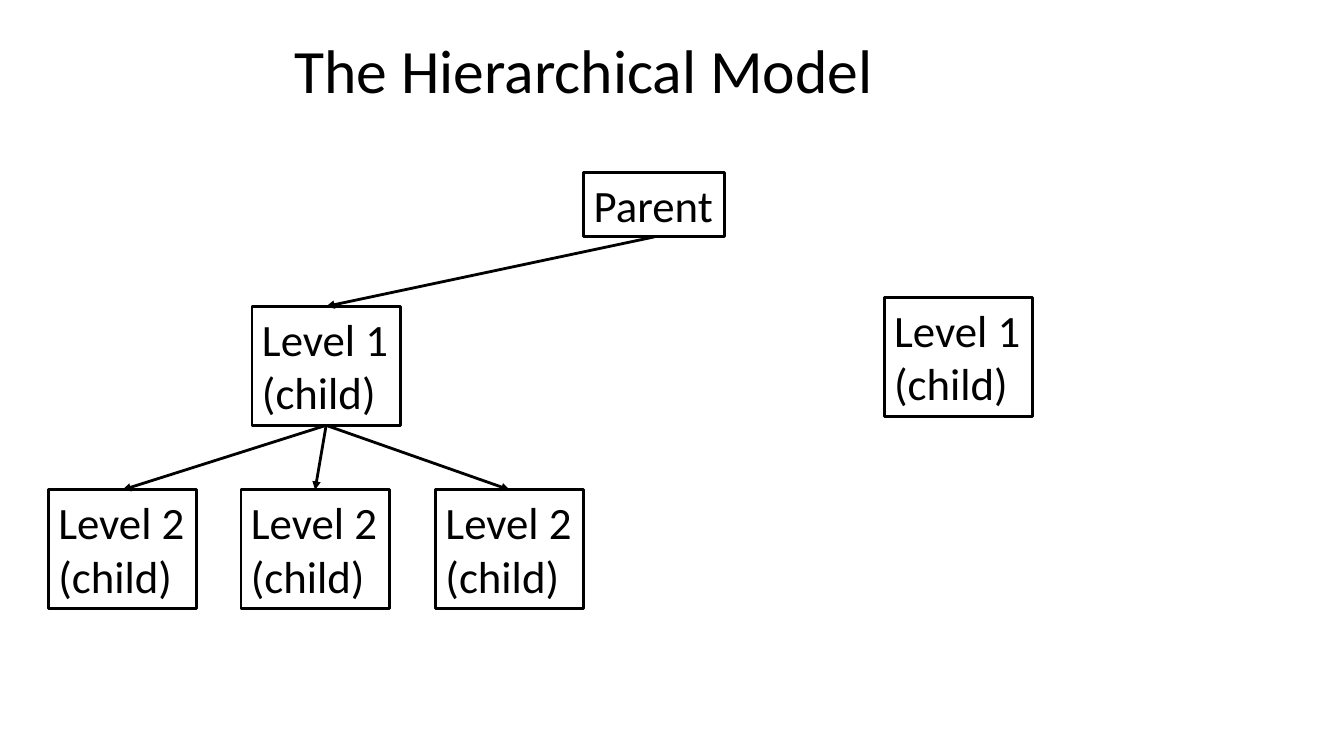
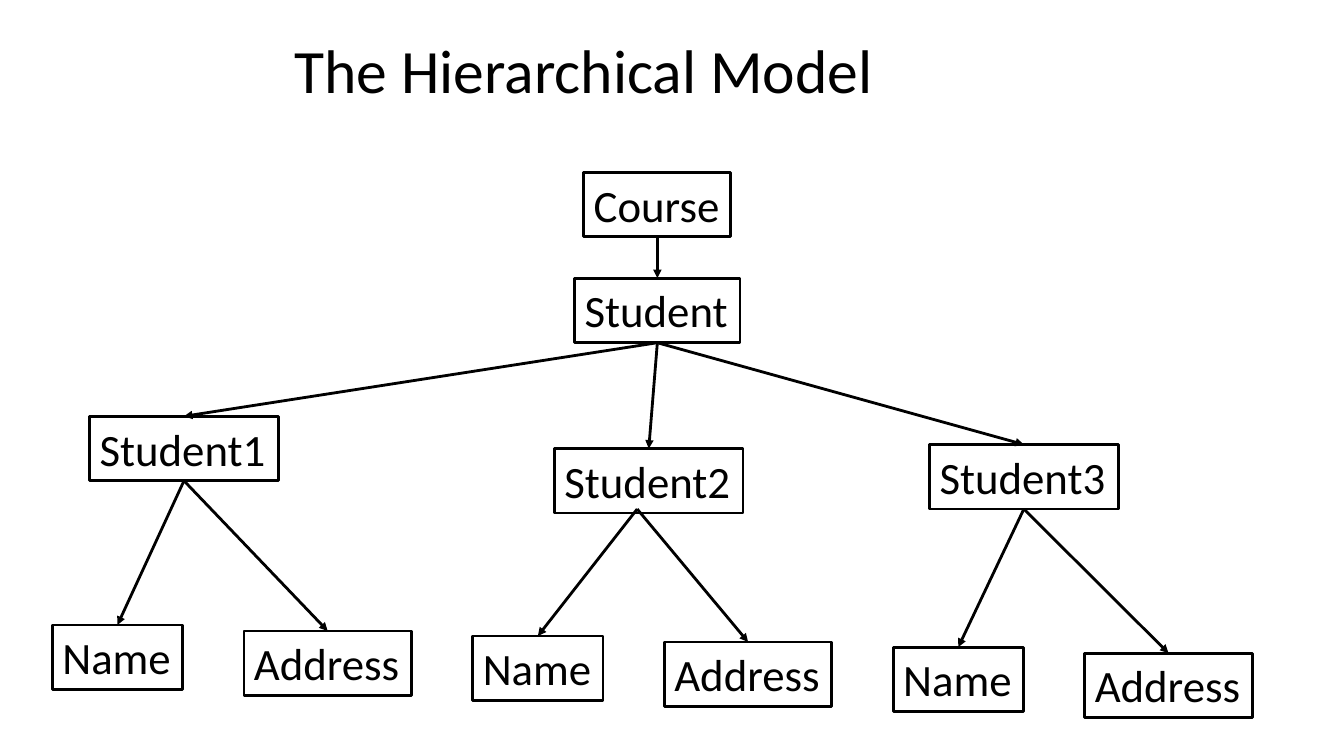
"""Build two slides that show the hierarchical model as trees of linked boxes."""
from lxml.etree import SubElement
from pptx import Presentation
from pptx.dml.color import RGBColor
from pptx.enum.shapes import MSO_CONNECTOR
from pptx.enum.text import MSO_ANCHOR, MSO_AUTO_SIZE, PP_ALIGN
from pptx.oxml.ns import qn
from pptx.util import Inches, Pt

BLACK = RGBColor(0, 0, 0)
FONT = "Calibri"
TITLE = "The Hierarchical Model"
TITLE_ONLY = 5
BOTTOM, TOP = 2, 0
ONE_LINE, TWO_LINES = 0.64, 1.18
LEVEL_W = 1.47
STUDENT_W = 1.87

LEVEL_BOXES = {
    "parent": ("Parent", 5.79, 1.71, 1.4),
    "left": ("Level 1\n(child)", 2.5, 3.04, LEVEL_W),
    "right": ("Level 1\n(child)", 8.77, 2.95, LEVEL_W),
}
LEVEL_LINKS = [("parent", "left")]
for i, x in enumerate((0.48, 2.39, 4.32)):
    LEVEL_BOXES[f"leaf{i}"] = ("Level 2\n(child)", x, 4.86, LEVEL_W)
    LEVEL_LINKS.append(("left", f"leaf{i}"))

COURSE_BOXES = {
    "course": ("Course", 5.79, 1.71, 1.46),
    "student": ("Student", 5.7, 2.76, 1.64),
}
COURSE_LINKS = [("course", "student")]
for i, (x, y) in enumerate(((0.89, 4.13), (5.5, 4.45), (9.22, 4.41))):
    student, name, address = f"student{i}", f"name{i}", f"address{i}"
    name_x, name_y = 0.52 + 4.17 * i, 6.2 + 0.11 * i
    COURSE_BOXES[student] = (f"Student{i + 1}", x, y, STUDENT_W)
    COURSE_BOXES[name] = ("Name", name_x, name_y, 1.29)
    COURSE_BOXES[address] = ("Address", name_x + 1.9, name_y + 0.06, 1.66)
    COURSE_LINKS += [("student", student), (student, name), (student, address)]

FREE_STARTS = {"student1": (6.32, 5.05)}
TREES = [
    (LEVEL_BOXES, LEVEL_LINKS, {}),
    (COURSE_BOXES, COURSE_LINKS, FREE_STARTS),
]


def place(sp, x, y, w, h):
    sp.left, sp.top, sp.width, sp.height = map(Inches, (x, y, w, h))


def write(tf, text, size, spacing=None):
    tf.text = text
    for p in tf.paragraphs:
        p.alignment = PP_ALIGN.LEFT
        p.line_spacing = spacing
        for r in p.runs:
            r.font.name, r.font.size = FONT, Pt(size)
            r.font.color.rgb = BLACK


def outline(sp):
    sp.line.color.rgb = BLACK
    sp.line.width = Pt(2)


def add_title(slide):
    sp = slide.shapes.title
    place(sp, 2.82, 0, 6.27, 1.45)
    sp.text_frame.auto_size = MSO_AUTO_SIZE.NONE
    sp.text_frame.vertical_anchor = MSO_ANCHOR.MIDDLE
    write(sp.text_frame, TITLE, 44, spacing=0.9)


def add_box(slide, text, x, y, w):
    h = TWO_LINES if "\n" in text else ONE_LINE
    sp = slide.shapes.add_textbox(*map(Inches, (x, y, w, h)))
    outline(sp)
    tf = sp.text_frame
    tf.word_wrap = False
    tf.auto_size = MSO_AUTO_SIZE.SHAPE_TO_FIT_TEXT
    write(tf, text, 32)


    return sp


def add_arrow(slide, parent, child, start=None):
    x, y = map(Inches, start or (0, 0))
    line = slide.shapes.add_connector(MSO_CONNECTOR.STRAIGHT, x, y, x, y)
    if start is None:
        line.begin_connect(parent, BOTTOM)
    line.end_connect(child, TOP)
    outline(line)
    SubElement(line.line._get_or_add_ln(), qn("a:tailEnd"), type="triangle")
    SubElement(line._element.spPr, qn("a:effectLst"))


def main():
    prs = Presentation()
    prs.slide_width, prs.slide_height = Inches(13.33), Inches(7.5)
    for boxes, links, starts in TREES:
        slide = prs.slides.add_slide(prs.slide_layouts[TITLE_ONLY])
        add_title(slide)
        shapes = {key: add_box(slide, *box) for key, box in boxes.items()}
        for parent, child in links:
            add_arrow(slide, shapes[parent], shapes[child], starts.get(parent))
    prs.save("out.pptx")


if __name__ == "__main__":
    main()
